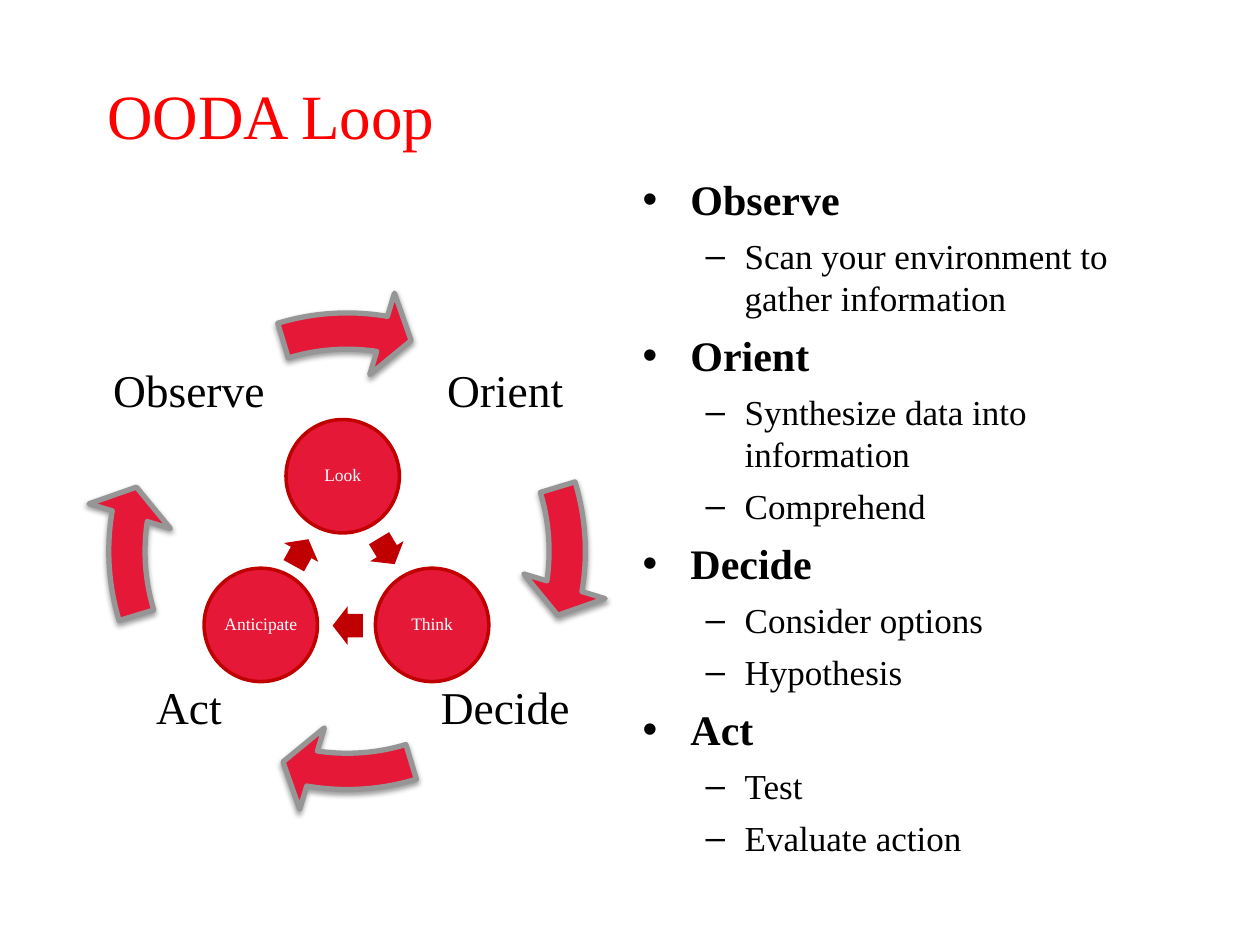
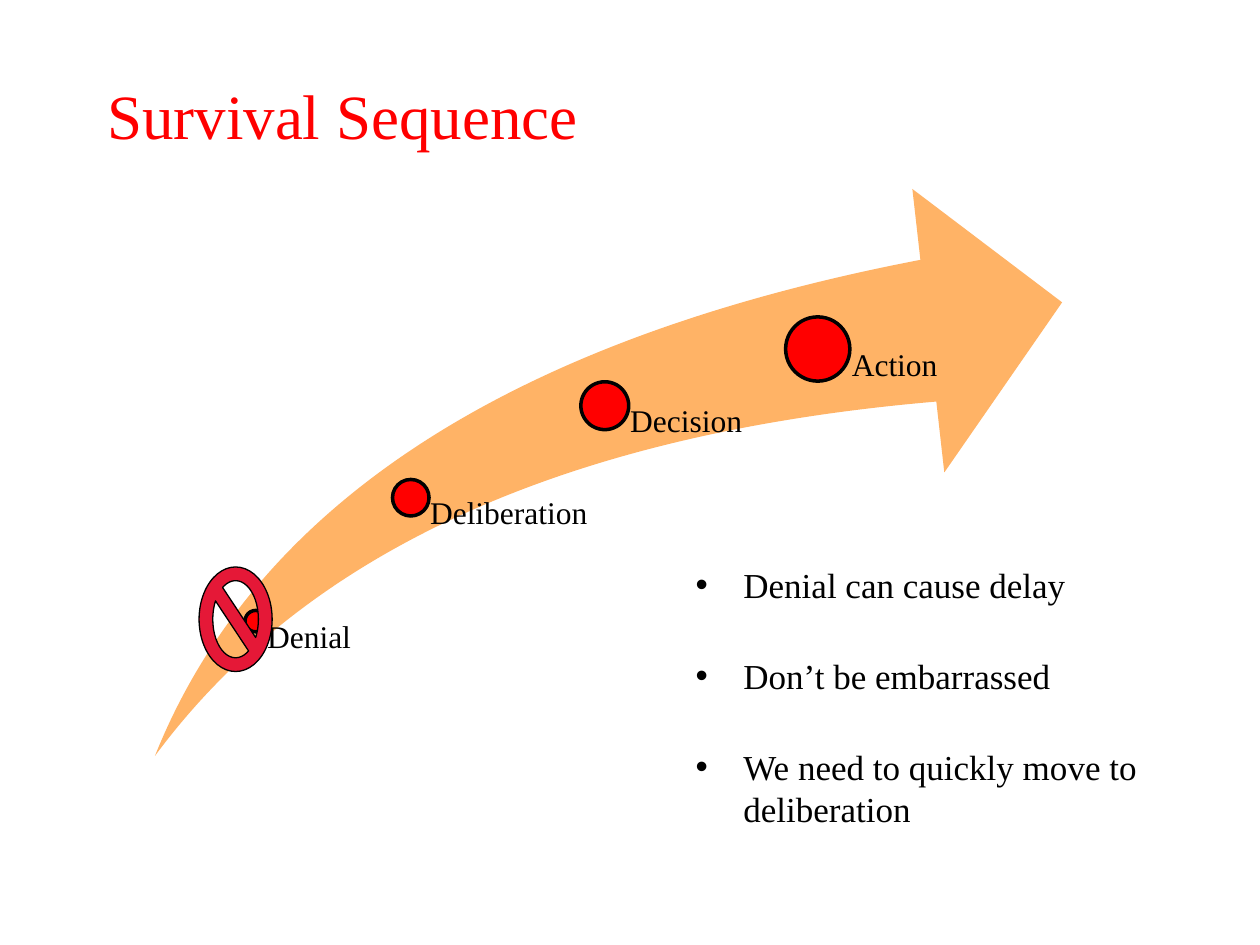
import pptx
import pptx.dml.color
import pptx.enum.shapes
import pptx.enum.text
import pptx.oxml
import pptx.oxml.ns
import pptx.util

Inches = pptx.util.Inches
Pt = pptx.util.Pt
RGBColor = pptx.dml.color.RGBColor
MSO_SHAPE = pptx.enum.shapes.MSO_SHAPE
MSO_ANCHOR = pptx.enum.text.MSO_ANCHOR
PP_ALIGN = pptx.enum.text.PP_ALIGN

FONT = "Times New Roman"
RED = RGBColor(0xFF, 0x00, 0x00)
CRIMSON = RGBColor(0xE5, 0x18, 0x37)
DARK_RED = RGBColor(0xC0, 0x00, 0x00)
GREY = RGBColor(0x96, 0x96, 0x96)
ORANGE = RGBColor(0xFF, 0xB3, 0x66)
BLACK = RGBColor(0x00, 0x00, 0x00)
WHITE = RGBColor(0xFF, 0xFF, 0xFF)

SOFT_SHADOW = (
    f'<a:outerShdw {pptx.oxml.ns.nsdecls("a")} blurRad="39370" dist="20320" '
    'dir="5400000" rotWithShape="0"><a:srgbClr val="000000">'
    '<a:alpha val="38000"/></a:srgbClr></a:outerShdw>'
)
LIST_LEVELS = [
    {"margin": 0.38, "hanging": 0.38},
    {"margin": 0.81, "hanging": 0.31},
]


def apply(target, formats):
    for name, value in formats.items():
        setattr(target, name, value)


def place(part, box):
    lengths = [Inches(length) for length in box]
    apply(part, dict(zip(("left", "top", "width", "height"), lengths)))


def write(paragraph, text, size, color, bold=False):
    paragraph.text = text
    font = paragraph.runs[0].font
    apply(font, {"name": FONT, "size": Pt(size), "bold": bold})
    font.color.rgb = color


def set_frame(frame, anchor, insets):
    sides = ("margin_left", "margin_top", "margin_right", "margin_bottom")
    apply(frame, dict(zip(sides, [Inches(inset) for inset in insets])))
    apply(frame, {
        "word_wrap": True,
        "vertical_anchor": anchor,
        "auto_size": pptx.enum.text.MSO_AUTO_SIZE.NONE,
    })


def write_label(frame, text, size, color, anchor, align, insets):
    set_frame(frame, anchor, insets)
    paragraph = frame.paragraphs[0]
    apply(paragraph, {"alignment": align, "line_spacing": 0.9})
    write(paragraph, text, size, color)


def add_label(slide, box, text, size, anchor, align, insets):
    label = slide.shapes.add_textbox(*[Inches(length) for length in box])
    write_label(label.text_frame, text, size, BLACK, anchor, align, insets)


def draw(slide, preset, box, fill, line=None, line_width=0, adjustments=(), rotation=0):
    shape = slide.shapes.add_shape(preset, *[Inches(length) for length in box])
    shape.shadow.inherit = False
    shape.rotation = rotation
    shape.fill.solid()
    shape.fill.fore_color.rgb = fill
    if line is None:
        shape.line.fill.background()
    else:
        shape.line.color.rgb = line
        shape.line.width = Pt(line_width)
    for index, value in enumerate(adjustments):
        shape.adjustments[index] = value
    return shape


def add_titled_slide(deck, heading):
    slide = deck.slides.add_slide(deck.slide_layouts[1])
    title = slide.shapes.title
    place(title, (0.75, 0.67, 8.5, 1.08))
    set_frame(title.text_frame, MSO_ANCHOR.TOP, (0.1, 0.05, 0.1, 0.05))
    paragraph = title.text_frame.paragraphs[0]
    apply(paragraph, {"alignment": PP_ALIGN.LEFT, "line_spacing": 0.8})
    write(paragraph, heading, 36, RED)
    return slide


def fill_list(slide, box, items, before, after):
    body = slide.placeholders[1]
    place(body, box)
    frame = body.text_frame
    set_frame(frame, MSO_ANCHOR.TOP, (0.1, 0.05, 0.1, 0.05))
    for index, (level, text, size, bold) in enumerate(items):
        paragraph = frame.add_paragraph() if index else frame.paragraphs[0]
        indent = LIST_LEVELS[level]
        properties = paragraph._p.get_or_add_pPr()
        properties.set("marL", str(Inches(indent["margin"])))
        properties.set("indent", str(-Inches(indent["hanging"])))
        apply(paragraph, {
            "level": level,
            "space_before": Pt(before if index else 0),
            "space_after": Pt(after),
        })
        write(paragraph, text, size, BLACK, bold)


def add_outer_loop(slide, left, top, size):
    near, far, label_size = 0.09, 2.6, 1.48
    stages = [("Orient", far, near), ("Decide", far, far),
              ("Act", near, far), ("Observe", near, near)]
    quarter_turn = 54
    for index, (stage, x, y) in enumerate(stages):
        add_label(slide, (left + x, top + y, label_size, label_size), stage, 26,
                  MSO_ANCHOR.MIDDLE, PP_ALIGN.CENTER, [0.04] * 4)
        turn = index * quarter_turn
        bend = (0.069, 4.653, 5.495 + turn, (205.852 + turn) % 216, 0.081)
        arrow = draw(slide, MSO_SHAPE.CIRCULAR_ARROW, (left, top, size, size),
                     CRIMSON, GREY, 3, bend)
        effects = arrow._element.spPr.find(pptx.oxml.ns.qn("a:effectLst"))
        effects.append(pptx.oxml.parse_xml(SOFT_SHADOW))


def add_inner_loop(slide, left, top):
    diameter = 0.9
    steps = [("Look", 0.65, 0), ("Think", 1.36, 1.18), ("Anticipate", 0, 1.18)]
    for step, x, y in steps:
        circle = draw(slide, MSO_SHAPE.OVAL, (left + x, top + y, diameter, diameter),
                      CRIMSON, DARK_RED, 2)
        write_label(circle.text_frame, step, 10, WHITE, MSO_ANCHOR.MIDDLE,
                    PP_ALIGN.CENTER, [0.01] * 4)
    for x, y, rotation in [(1.33, 0.89, 58.9), (1.02, 1.48, 180), (0.65, 0.9, 298.9)]:
        draw(slide, MSO_SHAPE.RIGHT_ARROW, (left + x, top + y, 0.24, 0.31), DARK_RED,
             adjustments=(0.6, 0.5), rotation=rotation)


def add_survival_arrow(slide, left, top, width, height):
    draw(slide, MSO_SHAPE.SWOOSH_ARROW, (left, top, width, height), ORANGE,
         adjustments=(0.25, 0.25))
    milestones = [("Denial", 0.8, 3.43, 0.17), ("Deliberation", 2.03, 2.45, 0.29),
                  ("Decision", 3.57, 1.72, 0.38), ("Action", 5.26, 1.27, 0.51)]
    for milestone, x, y, diameter in milestones:
        corner = (left + x - diameter / 2, top + y - diameter / 2)
        draw(slide, MSO_SHAPE.OVAL, (*corner, diameter, diameter), RED, BLACK, 2)
        add_label(slide, (left + x, top + y, 1.51, height - y), milestone, 18,
                  MSO_ANCHOR.TOP, PP_ALIGN.LEFT, (0.53 * diameter, 0, 0, 0))
    draw(slide, MSO_SHAPE.NO_SYMBOL, (left + 0.35, top + 3, 0.58, 0.83),
         CRIMSON, BLACK, 0.75)


def build_ooda_slide(deck):
    slide = add_titled_slide(deck, "OODA Loop")
    stages = {
        "Observe": ["Scan your environment to gather information"],
        "Orient": ["Synthesize data into information", "Comprehend"],
        "Decide": ["Consider options", "Hypothesis"],
        "Act": ["Test", "Evaluate action"],
    }
    items = []
    for stage, actions in stages.items():
        items.append((0, stage, 24, True))
        items.extend((1, action, 20, False) for action in actions)
    fill_list(slide, (5, 1.33, 4.25, 5), items, before=0, after=6)
    add_outer_loop(slide, 0.67, 2.29, 4.17)
    add_inner_loop(slide, 1.62, 3.33)


def build_survival_slide(deck):
    slide = add_titled_slide(deck, "Survival Sequence")
    advice = ["Denial can cause delay", "Don’t be embarrassed",
              "We need to quickly move to deliberation"]
    items = [(0, sentence, 20, False) for sentence in advice]
    fill_list(slide, (5.42, 4.42, 3.83, 1.92), items, before=4, after=24)
    add_survival_arrow(slide, 1.23, 1.5, 7.2, 4.5)


def main():
    deck = pptx.Presentation()
    apply(deck, {"slide_width": Inches(10), "slide_height": Inches(7.5)})
    build_ooda_slide(deck)
    build_survival_slide(deck)
    deck.save("out.pptx")


if __name__ == "__main__":
    main()
